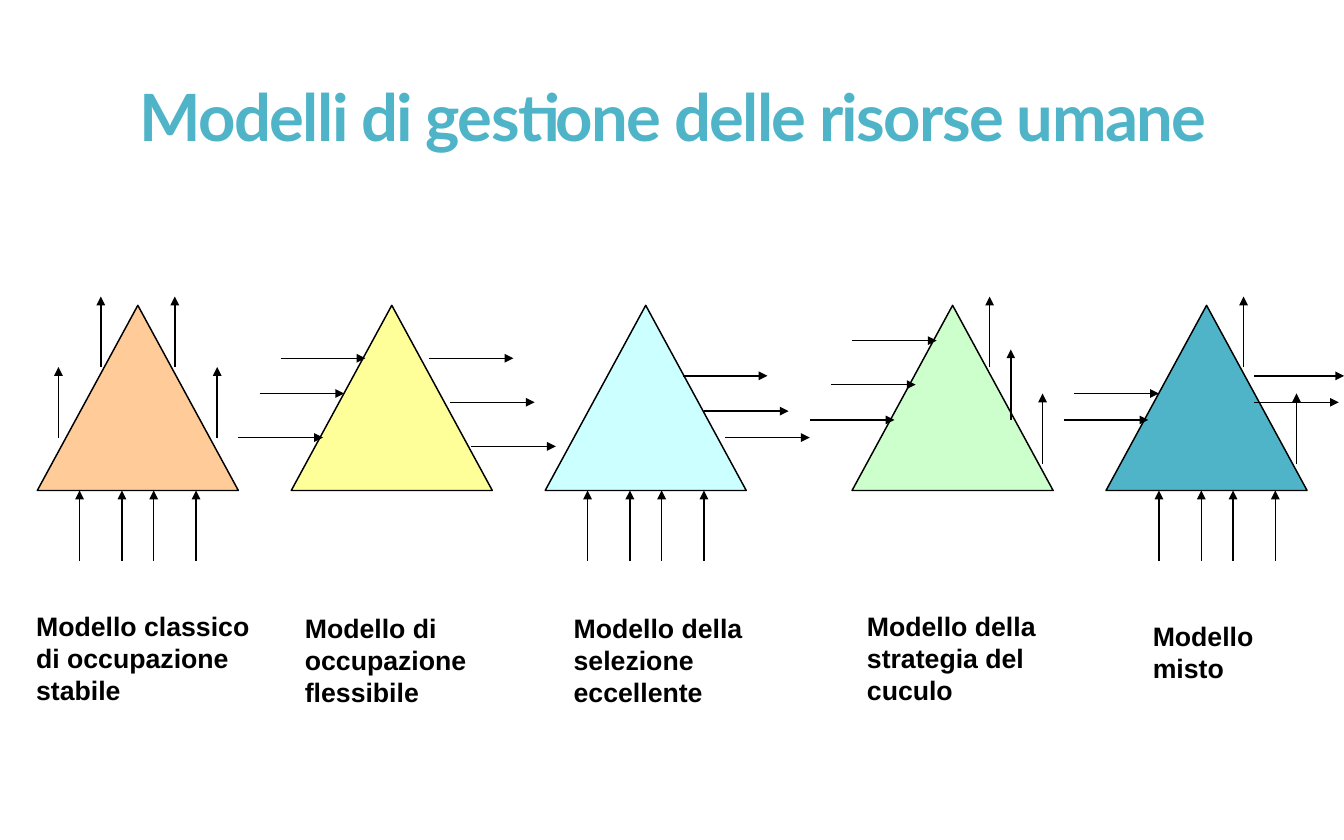
from lxml import etree
from pptx import Presentation
from pptx.dml.color import RGBColor
from pptx.enum.shapes import MSO_CONNECTOR, MSO_SHAPE
from pptx.enum.text import MSO_ANCHOR, PP_ALIGN
from pptx.oxml.ns import qn
from pptx.util import Inches, Pt

TRIANGLE = MSO_SHAPE.ISOSCELES_TRIANGLE
STRAIGHT = MSO_CONNECTOR.STRAIGHT
LEFT, CENTER = PP_ALIGN.LEFT, PP_ALIGN.CENTER
TOP, MIDDLE = MSO_ANCHOR.TOP, MSO_ANCHOR.MIDDLE

COLORS = {"teal": "50B4C8", "orange": "FFCC99", "yellow": "FFFF99",
          "cyan": "CCFFFF", "green": "CCFFCC", "black": "000000"}

# Slide size in points
WIDTH, HEIGHT = 907.25, 567

# Diagram grid: columns and rows counted from its top left corner
GRID_LEFT, GRID_TOP = 0.35, 2.78
COLUMN, ROW = 10.02 / 101, 2.48 / 30
TRIANGLE_COLUMNS, TRIANGLE_ROWS = 19, 21
ARROW_STEPS = 8
ENTRY_ROW = 30
ENTRIES = [(column, ENTRY_ROW) for column in (4, 8, 11, 15)]

# Arrows start at (column from the triangle's left, row)
MODELS = [
    {"column": 0, "color": "orange",
     "text": "Modello classico di occupazione stabile",
     "box": (0.24, 5.67, 2.28, 1),
     "up": ENTRIES + [(2, 16), (6, 8), (13, 8), (17, 16)], "right": []},
    {"column": 24, "color": "yellow",
     "text": "Modello di occupazione flessibile",
     "box": (2.76, 5.69, 1.89, 1),
     "up": [],
     "right": [(-5, 16), (-3, 11), (-1, 7), (13, 7), (15, 12), (17, 17)]},
    {"column": 48, "color": "cyan",
     "text": "Modello della selezione eccellente",
     "box": (5.28, 5.69, 1.89, 1),
     "up": ENTRIES, "right": [(13, 9), (15, 13), (17, 16)]},
    {"column": 77, "color": "green",
     "text": "Modello della strategia del cuculo",
     "box": (8.03, 5.67, 2.2, 1),
     "up": [(13, 8), (15, 14), (18, 19)],
     "right": [(0, 5), (-2, 10), (-4, 14)]},
    {"column": 101, "color": "teal", "text": "Modello misto",
     "box": (10.71, 5.76, 1.42, 0.7),
     "up": [(column + 1, row) for column, row in ENTRIES] + [(13, 8), (18, 19)],
     "right": [(-3, 11), (-4, 14), (14, 9, 8.5), (14, 12)]},
]


def add_text(page, area, text, font, size, color, align, anchor):
    box = page.shapes.add_textbox(*[Inches(length) for length in area])
    frame = box.text_frame
    frame.word_wrap = True
    frame.vertical_anchor = anchor
    para = frame.paragraphs[0]
    para.alignment = align
    span = para.add_run()
    span.text = text
    span.font.name = font
    span.font.size = Pt(size)
    span.font.bold = True
    span.font.color.rgb = RGBColor.from_string(COLORS[color])
    return para


def add_arrow(page, column, row, columns, rows):
    x, y = GRID_LEFT + column * COLUMN, GRID_TOP + row * ROW
    arrow = page.shapes.add_connector(
        STRAIGHT, Inches(x), Inches(y),
        Inches(x + columns * COLUMN), Inches(y + rows * ROW))
    arrow.line.color.rgb = RGBColor.from_string(COLORS["black"])
    arrow.line.width = Pt(1)
    etree.SubElement(arrow.line._get_or_add_ln(), qn("a:tailEnd"), type="triangle")
    etree.SubElement(arrow._element.spPr, qn("a:effectLst"))


deck = Presentation()
deck.slide_width, deck.slide_height = Pt(WIDTH), Pt(HEIGHT)
page = deck.slides.add_slide(deck.slide_layouts[6])

# Title
title = add_text(page, (0.24, 0.39, 12.14, 1.49),
                 "Modelli di gestione delle risorse umane",
                 "Lato", 44, "teal", CENTER, MIDDLE)
title.line_spacing = 0.85
title.runs[0]._r.get_or_add_rPr().set("spc", "-110")

# Triangles
for model in MODELS:
    triangle = page.shapes.add_shape(
        TRIANGLE, Inches(GRID_LEFT + model["column"] * COLUMN),
        Inches(GRID_TOP + ROW), Inches(TRIANGLE_COLUMNS * COLUMN),
        Inches(TRIANGLE_ROWS * ROW))
    triangle.shadow.inherit = False
    triangle.fill.solid()
    triangle.fill.fore_color.rgb = RGBColor.from_string(COLORS[model["color"]])
    triangle.line.color.rgb = RGBColor.from_string(COLORS["black"])
    triangle.line.width = Pt(1)

# Arrows and captions, above all triangles
for model in MODELS:
    for column, row in model["up"]:
        add_arrow(page, model["column"] + column, row, 0, -ARROW_STEPS)
    for column, row, *length in model["right"]:
        steps = length[0] if length else ARROW_STEPS
        add_arrow(page, model["column"] + column, row, steps, 0)
    add_text(page, model["box"], model["text"], "Arial", 18, "black", LEFT, TOP)

deck.save("out.pptx")
